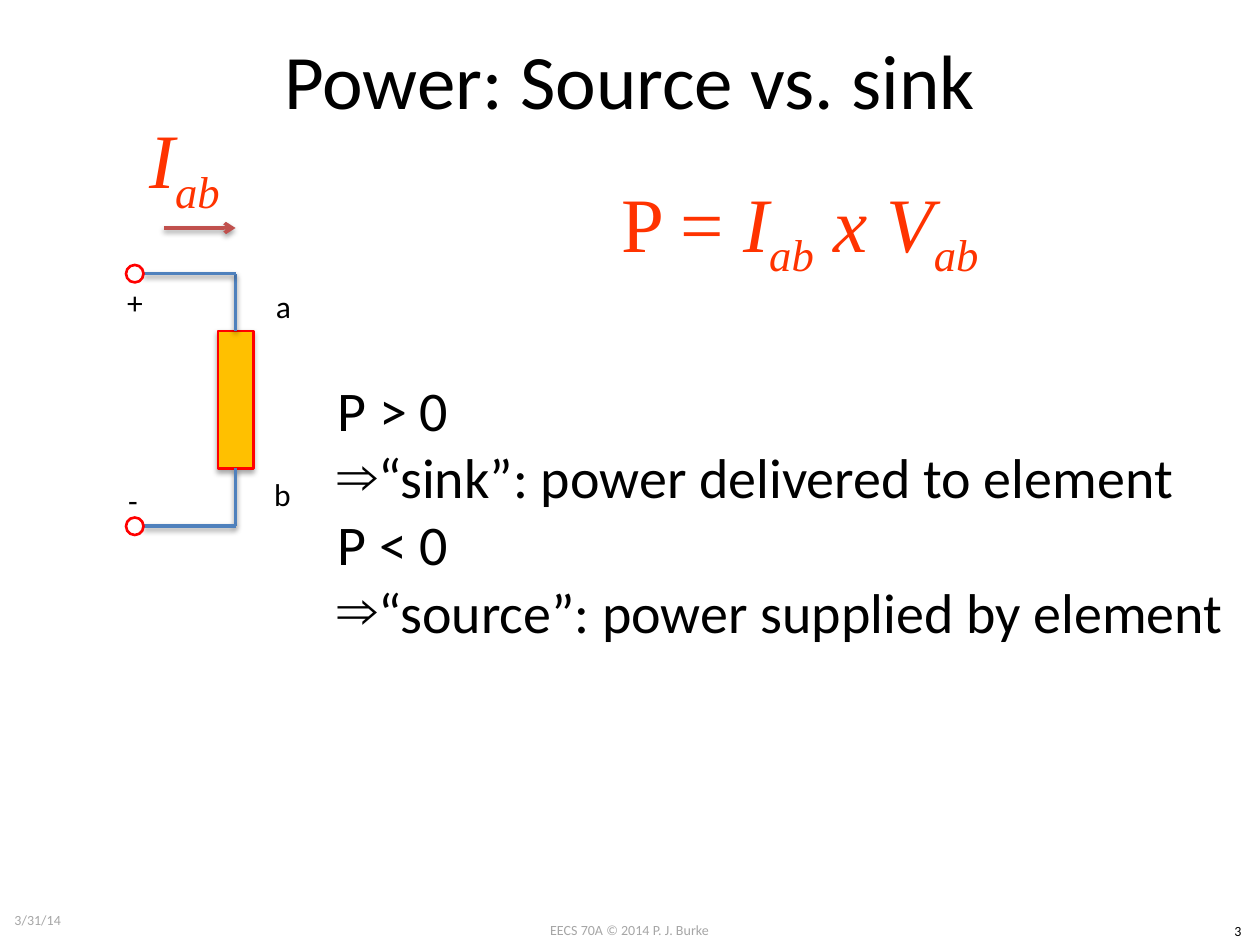
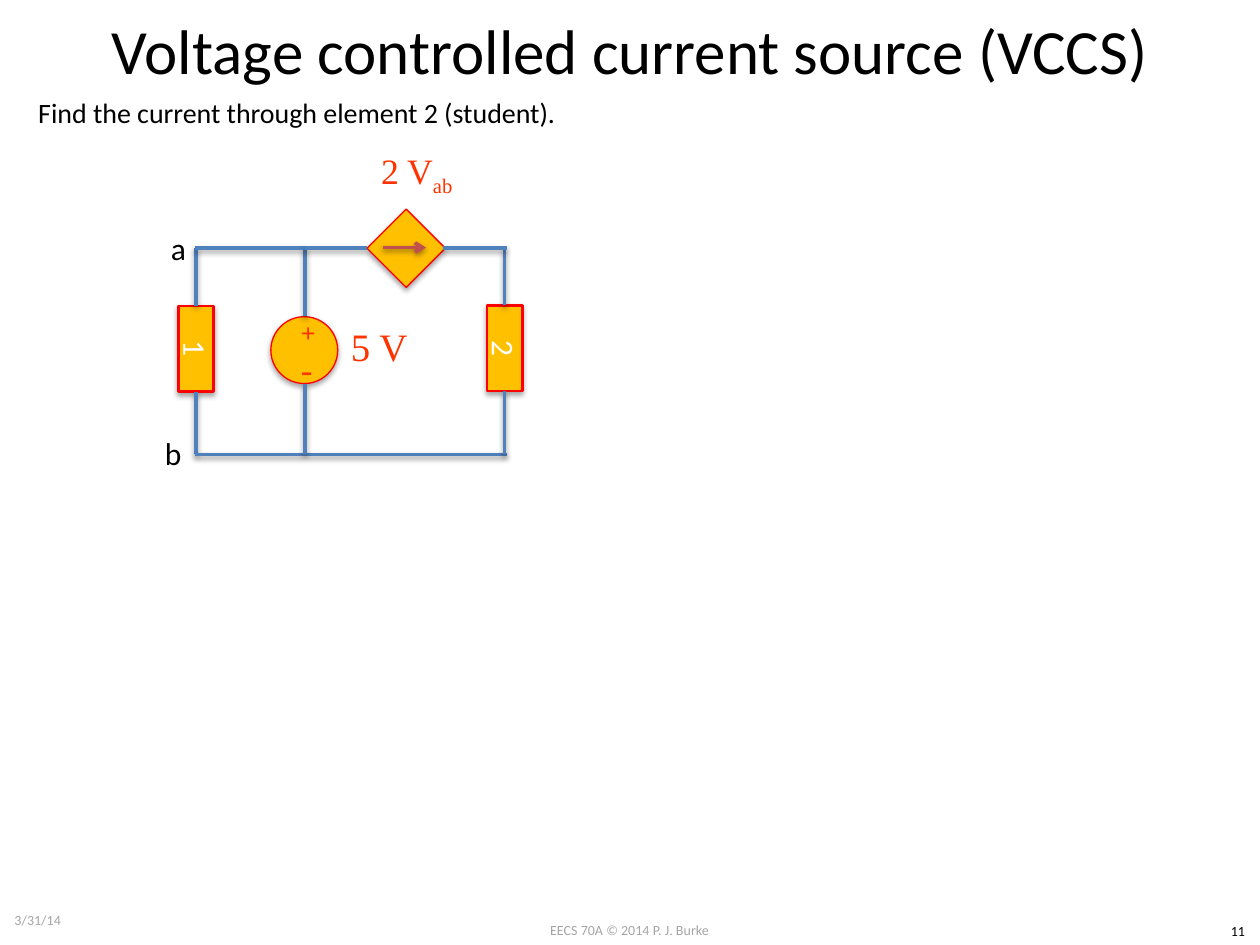
from pptx import Presentation
from pptx.dml.color import RGBColor
from pptx.enum.shapes import MSO_CONNECTOR, MSO_SHAPE
from pptx.enum.text import MSO_ANCHOR, PP_ALIGN
from pptx.oxml.ns import qn
from pptx.util import Pt
from lxml.etree import SubElement

BLACK, WHITE, GREY = "000000", "FFFFFF", "A6A6A6"
RED, GOLD, BLUE, ROSE, MATH = "FF0000", "FFC000", "4F81BD", "C0504D", "FF3300"
SANS, SERIF = "Calibri", "Times New Roman"


def tint(code):
    return RGBColor.from_string(code)


class Deck:
    def __init__(self):
        self.show = Presentation()
        self.show.slide_width, self.show.slide_height = Pt(720), Pt(540)
        self.slide = None

    def page(self, title, size, height, number):
        self.slide = self.show.slides.add_slide(self.show.slide_layouts[6])
        self.text((275.8, 522.9, 168, 17.3), "EECS 70A © 2014 P. J. Burke", 8, GREY, center=True)
        self.text((694.8, 523.4, 25.2, 17.3), number, 8, center=True)
        self.text((1.2, 511.2, 168, 28.8), "3/31/14", 8, GREY, middle=True)
        self.text((36, 0, 648, height), title, size, center=True, middle=True)

    def frame(self, box, middle, wrap):
        frame = self.slide.shapes.add_textbox(*map(Pt, box)).text_frame
        frame.word_wrap = wrap
        frame.vertical_anchor = MSO_ANCHOR.MIDDLE if middle else MSO_ANCHOR.TOP
        return frame

    def font(self, run, size, color, face):
        run.font.size, run.font.name = Pt(size), face
        run.font.color.rgb = tint(color)

    def text(self, box, words, size, color=BLACK, face=SANS, center=False,
             middle=False, wrap=True, bold=False):
        frame = self.frame(box, middle, wrap)
        frame.text = words
        for para in frame.paragraphs:
            para.alignment = PP_ALIGN.CENTER if center else PP_ALIGN.LEFT
            for run in para.runs:
                self.font(run, size, color, face)
                run.font.bold = bold
        return frame

    def label(self, left, top, words, size=18):
        self.text((left, top, 24, 28.8), words, size, wrap=False)

    def math(self, box, size, *parts):
        para = self.frame(box, True, True).paragraphs[0]
        para.alignment = PP_ALIGN.CENTER
        for words, slant, sub in parts:
            run = para.add_run()
            run.text = words
            self.font(run, size, MATH, SERIF)
            run.font.italic = slant
            if sub:
                run._r.get_or_add_rPr().set("baseline", "-25000")

    def bullet(self, para, mark, indent):
        props = para._p.get_or_add_pPr()
        props.set("marL", str(Pt(indent)))
        props.set("indent", str(-Pt(indent)))
        SubElement(props, qn("a:buFont"), typeface=SERIF)
        SubElement(props, qn("a:buChar"), char=mark)

    def shade(self, effect, alpha, drop):
        outer = SubElement(effect, qn("a:outerShdw"), blurRad=str(Pt(3.1)),
                           dist=str(Pt(drop)), dir="5400000", rotWithShape="0")
        color = SubElement(outer, qn("a:srgbClr"), val=BLACK)
        SubElement(color, qn("a:alpha"), val=str(alpha * 1000))

    def shape(self, kind, box, fill=GOLD, width=1.5, turn=0, words=""):
        shape = self.slide.shapes.add_shape(kind, *map(Pt, box))
        shape.rotation = turn
        shape.line.color.rgb, shape.line.width = tint(RED), Pt(width)
        shape.shadow.inherit = False
        if fill:
            shape.fill.solid()
            shape.fill.fore_color.rgb = tint(fill)
            self.shade(shape._element.spPr.find(qn("a:effectLst")), 35, 1.8)
        else:
            shape.fill.background()
        if words:
            shape.text_frame.text = words
            shape.text_frame.vertical_anchor = MSO_ANCHOR.MIDDLE
            para = shape.text_frame.paragraphs[0]
            para.alignment = PP_ALIGN.CENTER
            self.font(para.runs[0], 18, WHITE, SANS)

    def wire(self, *ends, color=BLUE, arrow=False):
        line = self.slide.shapes.add_connector(MSO_CONNECTOR.STRAIGHT, *map(Pt, ends))
        line.line.color.rgb, line.line.width = tint(color), Pt(2)
        props = line._element.spPr
        if arrow:
            SubElement(props.find(qn("a:ln")), qn("a:tailEnd"), type="arrow")
        self.shade(SubElement(props, qn("a:effectLst")), 38, 1.6)

    def branch(self, x, top, end, mid, span, words=""):
        thick = 20.2
        self.shape(MSO_SHAPE.RECTANGLE, (x - span / 2, mid - thick / 2, span, thick),
                   turn=90, words=words)
        self.wire(x, end, x, mid + span / 2)
        self.wire(x, mid - span / 2, x, top)


def power(deck):
    deck.page("Power: Source vs. sink", 44, 90, "3")
    deck.label(150.5, 160.6, "a")
    deck.label(149.6, 267.8, "b")
    top, end, x = 156.4, 300.7, 134.6
    deck.branch(x, top, end, 228.4, 78.5)
    for y in (top, end):
        deck.wire(82.1, y, x, y)
        deck.shape(MSO_SHAPE.OVAL, (72, y - 5, 10, 10), fill=None)
    deck.wire(93.6, 130.3, x, 130.3, color=ROSE, arrow=True)
    deck.math((60.5, 57.6, 90, 72.7), 44, ("I", True, False), ("ab", True, True))
    deck.math((323.3, 94, 267.8, 72.7), 44, ("P = ", False, False), ("I", True, False),
              ("ab", True, True), (" x V", True, False), ("ab", True, True))
    rules = deck.text((185.8, 211, 534.2, 162.7),
                      "P > 0\n“sink”: power delivered to element\n"
                      "P < 0\n“source”: power supplied by element", 32, wrap=False)
    for para in rules.paragraphs[1::2]:
        deck.bullet(para, "⇒", 22)
    deck.label(65.5, 158.4, "+")
    deck.label(66.2, 271.4, "-")


def source(deck):
    deck.page("Voltage controlled current source (VCCS)", 36, 56.2, "11")
    top, end, left, mid, right = 141.8, 259.7, 112, 174.2, 288.3
    deck.branch(left, top, end, 199.4, 49, "1")
    deck.wire(left - 0.7, end, right + 1.4, end)
    deck.shape(MSO_SHAPE.OVAL, (154.8, 181, 38.2, 38.2), width=0.75)
    for y, sign, size in ((177.8, "+", 14.8), (198.7, "-", 20)):
        deck.text((164.9, y, 18.7, 23.8), sign, size, MATH, SERIF, center=True,
                  middle=True, bold=sign == "+")
    deck.wire(mid, end, mid, 219.6)
    deck.wire(mid, 180.7, mid, top)
    deck.wire(left - 0.7, top, mid, top)
    deck.branch(right, top, end, 199, 49, "2")
    deck.label(90.5, 127.4, "a")
    deck.label(87.1, 244.5, "b")
    deck.text((193.3, 180.7, 46.8, 33.8), "5 V", 22.2, MATH, SERIF, center=True, middle=True)
    deck.text((14.8, 51.1, 313.9, 26.6), "Find the current through element 2 (student).",
              16, wrap=False)
    deck.shape(MSO_SHAPE.RECTANGLE, (216.2, 126, 31.7, 31.7), width=0.75, turn=135)
    deck.wire(253.4, top, right + 1.4, top)
    deck.wire(mid, top, 209.5, top)
    deck.wire(218.7, 141.5, 243.4, 141.5, color=ROSE, arrow=True)
    deck.math((209.7, 78.5, 56.9, 41), 20.4, ("2 V", False, False), ("ab", False, True))


def main():
    deck = Deck()
    power(deck)
    source(deck)
    deck.show.save("out.pptx")


if __name__ == "__main__":
    main()
